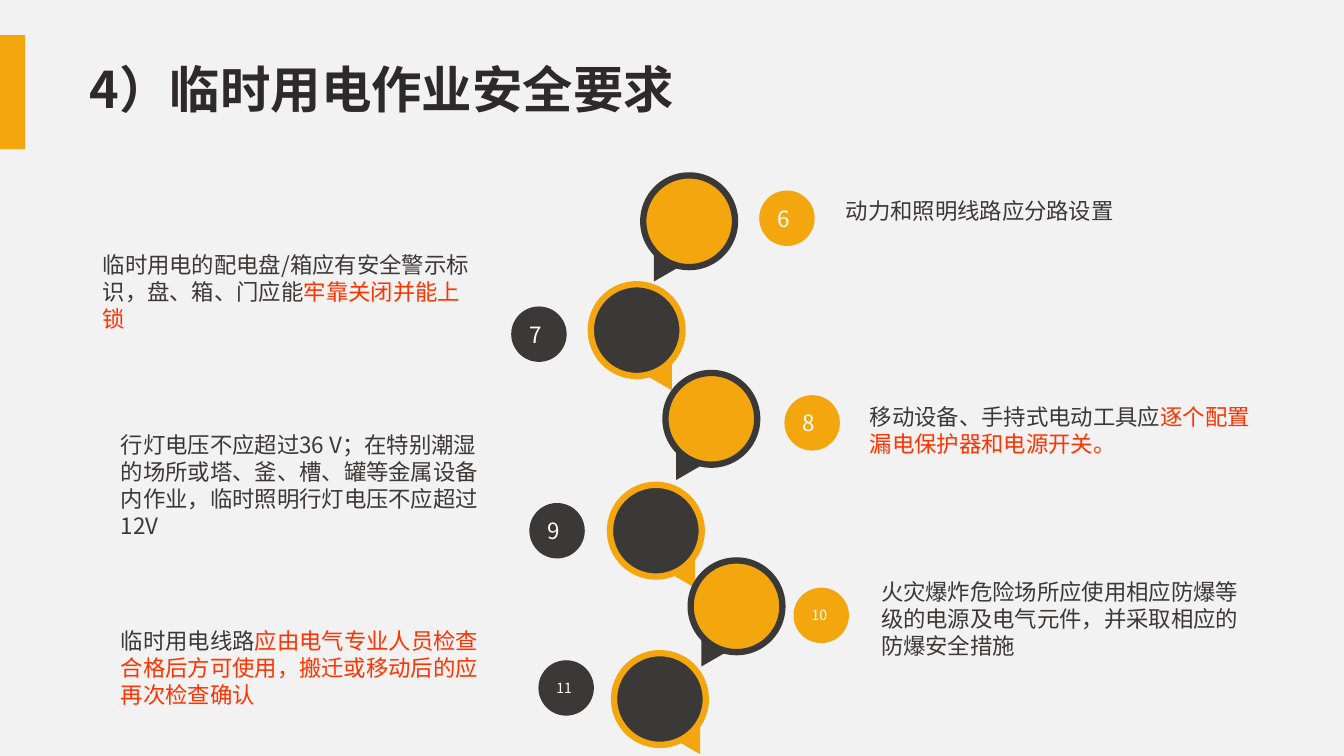
import pptx
import pptx.util
import pptx.dml.color
import pptx.enum.shapes
import pptx.enum.text
import pptx.oxml.ns
import lxml.etree

FONT = "Noto Sans CJK SC"
AMBER, DARK, INK, RED, WHITE, PAPER = "F3A60D", "3B3838", "2C2A2A", "FF3300", "FFFFFF", "F2F2F2"
SHAPES = pptx.enum.shapes.MSO_SHAPE
ANCHORS = pptx.enum.text.MSO_ANCHOR
COLUMNS, ROWS = 133.3, 75
BUBBLE, BADGE = 9.1, 5.5
TAIL_WIDTH, TAIL_HEIGHT = 3, 2.6


def color(code):
    return pptx.dml.color.RGBColor.from_string(code)


class Page:
    def __init__(self, deck):
        self.deck = deck
        self.page = deck.slides.add_slide(deck.slide_layouts[5])
        self.page.background.fill.solid()
        self.page.background.fill.fore_color.rgb = color(PAPER)

    def place(self, left, top, width, height):
        column = self.deck.slide_width / COLUMNS
        row = self.deck.slide_height / ROWS
        return [round(n) for n in (left * column, top * row, width * column, height * row)]

    def fill_text(self, box, spans, size, bold=False, anchor=ANCHORS.TOP, spacing=None):
        frame = box.text_frame
        frame.word_wrap = True
        frame.auto_size = pptx.enum.text.MSO_AUTO_SIZE.NONE
        frame.vertical_anchor = anchor
        para = frame.paragraphs[0]
        para.alignment = pptx.enum.text.PP_ALIGN.LEFT
        para.line_spacing = spacing
        for text, code in spans:
            span = para.add_run()
            span.text = text
            span.font.size = pptx.util.Pt(size)
            span.font.bold = bold
            span.font.color.rgb = color(code)
            span.font.name = FONT
            east = lxml.etree.SubElement(span.font._element, pptx.oxml.ns.qn("a:ea"))
            east.set("typeface", FONT)

    def title(self, area, text):
        box = self.page.shapes.title
        box.left, box.top, box.width, box.height = self.place(*area)
        self.fill_text(box, [(text, INK)], 36, True, ANCHORS.MIDDLE, 0.9)

    def text(self, area, spans):
        box = self.page.shapes.add_textbox(*self.place(*area))
        self.fill_text(box, spans, 16)

    def shape(self, kind, area, fill, ring=None, turn=0):
        box = self.page.shapes.add_shape(kind, *self.place(*area))
        box.shadow.inherit = False
        box.rotation = turn
        box.fill.solid()
        box.fill.fore_color.rgb = color(fill)
        if ring:
            box.line.color.rgb = color(ring)
            box.line.width = pptx.util.Pt(4.5)
        else:
            box.line.fill.background()
        return box

    def bubble(self, left, top, tail_left, tail_top, fill, ring, turn):
        tail = (left + tail_left, top + tail_top, TAIL_WIDTH, TAIL_HEIGHT)
        self.shape(SHAPES.ISOSCELES_TRIANGLE, tail, ring, turn=turn)
        self.shape(SHAPES.OVAL, (left, top, BUBBLE, BUBBLE), fill, ring)

    def badge(self, left, top, number, fill):
        box = self.shape(SHAPES.OVAL, (left, top, BADGE, BADGE), fill)
        size = 16 if number < 10 else 10
        self.fill_text(box, [(str(number), WHITE)], size, anchor=ANCHORS.MIDDLE)


FIRST_NUMBER = 6
REQUIREMENTS = [
    ((63.8, 17.4), (0.2, 8.1), (75.3, 18.9), (82.9, 19.1, 42.5, 11.2),
     [("动力和照明线路应分路设置", DARK)]),
    ((58.6, 28.2), (5.9, 8.1), (50.7, 30.4), (9.2, 24.4, 38.5, 13.1),
     [("临时用电的配电盘/箱应有安全警示标识，盘、箱、门应能", DARK), ("牢靠关闭并能上锁", RED)]),
    ((66, 37), (0.2, 8.2), (77.8, 39.2), (85.3, 39.5, 41.2, 10.3),
     [("移动设备、手持式电动工具应", DARK), ("逐个配置漏电保护器和电源开关。", RED)]),
    ((60.5, 48.1), (6.3, 7.8), (52.5, 49.9), (11, 42.3, 38.5, 13.1),
     [("行灯电压不应超过36 V；在特别潮湿的场所或塔、釜、槽、罐等金属设备内作业，"
       "临时照明行灯电压不应超过12V", DARK)]),
    ((68.5, 55.6), (0.2, 8.1), (78.7, 58.3), (86.4, 56.9, 39, 13.1),
     [("火灾爆炸危险场所应使用相应防爆等级的电源及电气元件，并采取相应的防爆安全措施", DARK)]),
    ((60.9, 64.8), (6.4, 7.6), (53.4, 65.5), (11, 61.7, 39, 13.1),
     [("临时用电线路", DARK),
      ("应由电气专业人员检查合格后方可使用，搬迁或移动后的应再次检查确认", RED)]),
]


def main():
    deck = pptx.Presentation()
    deck.slide_width = pptx.util.Inches(13.33)
    deck.slide_height = pptx.util.Inches(7.5)
    page = Page(deck)
    page.title((7.9, 4, 87.5, 10.2), "4）临时用电作业安全要求")
    page.shape(SHAPES.RECTANGLE, (-0.1, 3.5, 2.6, 11.3), AMBER)
    for number, (bubble, tail, badge, area, spans) in enumerate(REQUIREMENTS, FIRST_NUMBER):
        fill, ring, turn = (DARK, AMBER, 150) if number % 2 else (AMBER, DARK, 210)
        page.bubble(*bubble, *tail, fill, ring, turn)
        page.badge(*badge, number, fill)
        page.text(area, spans)
    deck.save("out.pptx")


if __name__ == "__main__":
    main()
